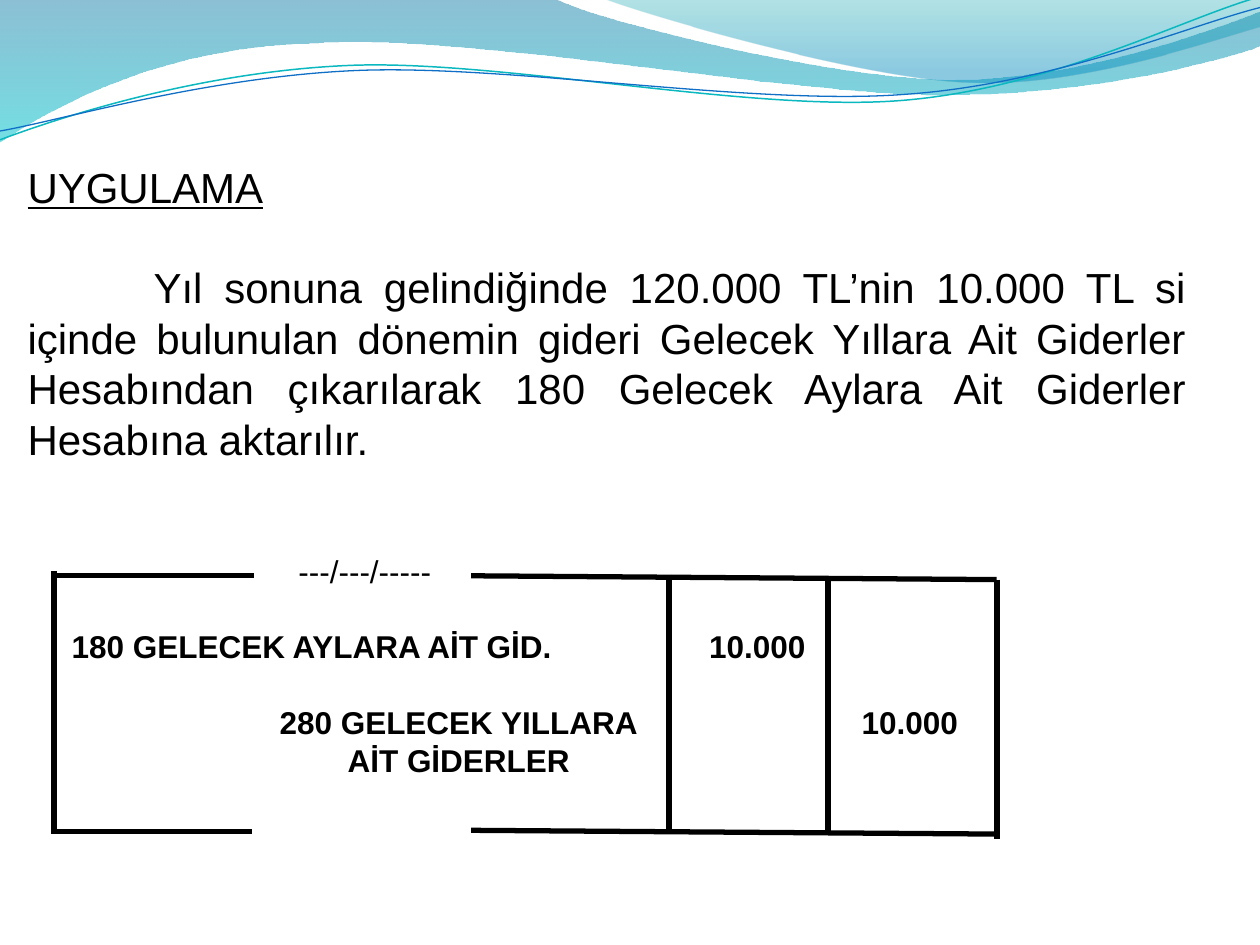
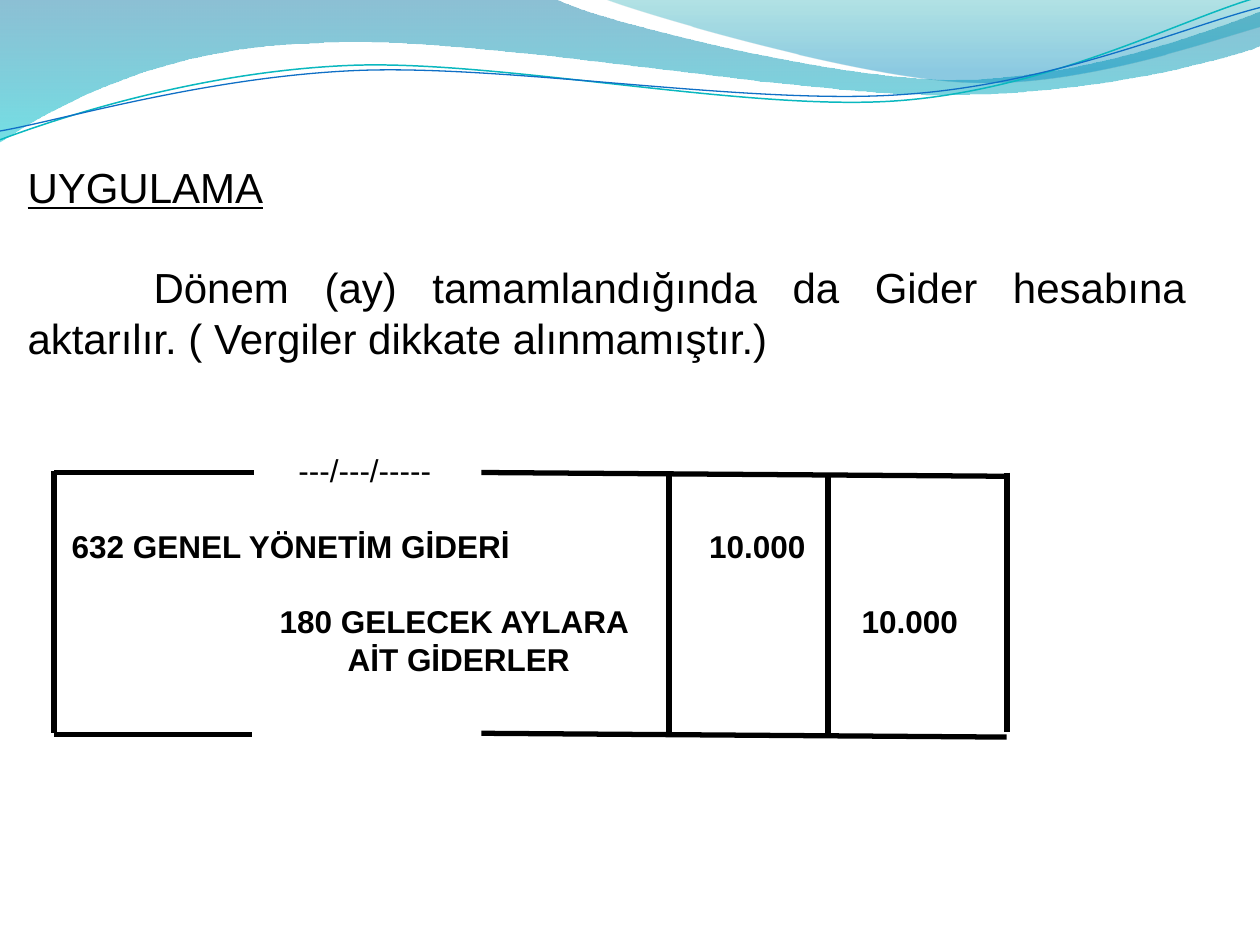
"""Build two accounting practice slides with a wave header and a journal entry each."""
from dataclasses import dataclass

from lxml import etree
from pptx import Presentation
from pptx import util as u
from pptx.dml.color import RGBColor
from pptx.enum import shapes, text
from pptx.oxml import ns


@dataclass(frozen=True)
class Theme:
    font: str = "Arial"
    ink: str = "000000"
    body_size: int = 24
    journal_size: int = 18
    leading: float = 1.2
    rule: float = 3
    column_rule: float = 3.5


THEME = Theme()
BODY_ROW = THEME.body_size * THEME.leading
JOURNAL_ROW = THEME.journal_size * THEME.leading
DEBIT_TAB, CREDIT_TAB, DATE_TAB, CREDIT_END_TAB = 0.35, 2, 2.15, 2.54
DEBIT_AMOUNT_TAB, CREDIT_AMOUNT_TAB = 5.41, 6.62

WAVES = [
    {"start": (0, 0), "stops": [(0, "0074A1", 45), (1, "00C6CF", 55)],
     "segments": [
         [(4.4, -0.01)],
         [(4.76, 0.17), (6.64, 0.63), (7.58, 0.63)],
         [(8.53, 0.63), (9.58, 0.26), (10, 0.09)],
         [(10.01, 0.36)],
         [(9.83, 0.44), (8.7, 0.76), (7.46, 0.75)],
         [(6.22, 0.75), (3.82, 0.28), (2.57, 0.34)],
         [(1.29, 0.36), (0.46, 0.83), (-0.01, 1.13)]]},
    {"start": (4.79, -0.01), "stops": [(0, "00A1A9", 30), (0.8, "008BBF", 45)],
     "segments": [
         [(5.09, 0.11), (6.82, 0.62), (7.69, 0.65)],
         [(8.56, 0.69), (9.61, 0.32), (10, 0.21)],
         [(10, 0)]]},
    {"start": (0, 1.11), "line": ("0AB8BF", 0.85),
     "segments": [
         [(0.48, 0.93), (1.58, 0.57), (2.77, 0.52)],
         [(3.95, 0.47), (5.93, 0.89), (7.13, 0.8)],
         [(8.33, 0.71), (9.38, 0.15), (9.98, -0.02)]]},
    {"start": (0, 1.04), "line": ("0F6FC6", 0.75),
     "segments": [
         [(0.47, 0.96), (1.64, 0.61), (2.83, 0.56)],
         [(4.03, 0.51), (5.97, 0.84), (7.17, 0.75)],
         [(8.36, 0.67), (9.41, 0.21), (10, 0.06)]]},
]

ENTRIES = [
    {"body": "Yıl sonuna gelindiğinde 120.000 TL’nin 10.000 TL si içinde bulunulan "
             "dönemin gideri Gelecek Yıllara Ait Giderler Hesabından çıkarılarak "
             "180 Gelecek Aylara Ait Giderler Hesabına aktarılır.",
     "debit": "180 GELECEK AYLARA AİT GİD.", "credit": "280 GELECEK YILLARA",
     "box_height": 7.98, "frame_top": 4.57, "frame_bottom": 6.6, "frame_right": 7.91,
     "columns": [(4.53, 6.62), (4.56, 6.62), (4.57, 6.63), (4.6, 6.66)]},
    {"body": "Dönem (ay) tamamlandığında da Gider hesabına aktarılır. "
             "( Vergiler dikkate alınmamıştır.)",
     "debit": "632 GENEL YÖNETİM GİDERİ", "credit": "180 GELECEK AYLARA",
     "box_height": 6.87, "frame_top": 3.75, "frame_bottom": 5.83, "frame_right": 7.99,
     "columns": [(3.74, 5.82), (3.76, 5.82), (3.76, 5.82), (3.75, 5.81)]},
]


def write_text(para, words, size=THEME.journal_size, bold=False, underline=False,
               gap=0, tabs=(), align=text.PP_ALIGN.LEFT):
    """Fill a paragraph with one formatted span, set on the given tab stops."""
    para.alignment = align
    para.line_spacing = u.Pt(size * THEME.leading)
    para.space_before, para.space_after = u.Pt(gap), u.Pt(0)
    if tabs:
        tab_list = etree.SubElement(para._p.get_or_add_pPr(), ns.qn("a:tabLst"))
        for position in tabs:
            etree.SubElement(tab_list, ns.qn("a:tab"), pos=str(u.Inches(position)), algn="l")
    span = para.add_run()
    span.text = words
    span.font.name, span.font.size = THEME.font, u.Pt(size)
    span.font.bold, span.font.underline = bold, underline
    span.font.color.rgb = RGBColor.from_string(THEME.ink)


def draw_wave(page, start, segments, closed):
    """Draw an outline whose three-point segments are cubic curves."""
    points = [(u.Inches(x), u.Inches(y)) for segment in segments for x, y in segment]
    builder = page.shapes.build_freeform(u.Inches(start[0]), u.Inches(start[1]))
    builder.add_line_segments(points, close=closed)
    shape = builder.convert_to_shape()
    steps = iter(list(shape.element.iter(ns.qn("a:lnTo"))))
    for segment in segments:
        parts = [next(steps) for point in segment]
        if len(parts) == 3:
            curve = etree.Element(ns.qn("a:cubicBezTo"))
            parts[0].addprevious(curve)
            for part in parts:
                curve.append(part[0])
                part.getparent().remove(part)
    shape.shadow.inherit = False
    return shape


deck = Presentation()
deck.slide_width, deck.slide_height = u.Inches(10), u.Inches(7.5)
blank = deck.slide_layouts[6]
pages = [deck.slides.add_slide(blank) for entry in ENTRIES]

master_tree = deck.slide_master.shapes.element
for order, wave in enumerate(WAVES):
    shape = draw_wave(pages[0], wave["start"], wave["segments"], "stops" in wave)
    if "stops" in wave:
        shape.line.fill.background()
        shape.fill.gradient()
        shape.fill.gradient_angle = 270
        for stop, (position, colour, opacity) in zip(shape.fill.gradient_stops, wave["stops"]):
            stop.position = position
            stop.color.rgb = RGBColor.from_string(colour)
        for swatch, (position, colour, opacity) in zip(
                shape.element.iter(ns.qn("a:srgbClr")), wave["stops"]):
            etree.SubElement(swatch, ns.qn("a:alpha")).set("val", str(opacity * 1000))
    else:
        colour, weight = wave["line"]
        shape.fill.background()
        shape.line.color.rgb = RGBColor.from_string(colour)
        shape.line.width = u.Pt(weight)
    master_tree.insert(2 + order, shape.element)

for page, entry in zip(pages, ENTRIES):
    box = page.shapes.add_textbox(u.Inches(0.12), u.Inches(1.23),
                                  u.Inches(9.39), u.Inches(entry["box_height"]))
    frame = box.text_frame
    frame.word_wrap = True
    frame.auto_size = text.MSO_AUTO_SIZE.NONE
    write_text(frame.paragraphs[0], "UYGULAMA", size=THEME.body_size, underline=True)
    write_text(frame.add_paragraph(), "\t" + entry["body"], size=THEME.body_size,
               gap=BODY_ROW, tabs=(1,), align=text.PP_ALIGN.JUSTIFY)
    journal = [
        ("\t---/---/-----", BODY_ROW + JOURNAL_ROW, (DATE_TAB,), False),
        (f"\t{entry['debit']}\t10.000", JOURNAL_ROW, (DEBIT_TAB, DEBIT_AMOUNT_TAB), True),
        (f"\t{entry['credit']}\t10.000", JOURNAL_ROW, (CREDIT_TAB, CREDIT_AMOUNT_TAB), True),
        ("\tAİT GİDERLER", 0, (CREDIT_END_TAB,), True),
    ]
    for words, gap, tabs, bold in journal:
        write_text(frame.add_paragraph(), words, gap=gap, tabs=tabs, bold=bold)

    top, bottom, right = entry["frame_top"], entry["frame_bottom"], entry["frame_right"]
    gap_end = right - 4.17
    rules = [
        (0.43, top, 2.02, top, THEME.rule),
        (gap_end, top, right, top + 0.03, THEME.rule),
        (0.43, bottom, 2, bottom, THEME.rule),
        (gap_end, bottom - 0.01, right, bottom + 0.02, THEME.rule),
    ]
    for x, (column_top, column_bottom) in zip((0.43, 5.31, 6.57, right), entry["columns"]):
        rules.append((x, column_top, x, column_bottom, THEME.column_rule))
    for *ends, weight in rules:
        rule = page.shapes.add_connector(shapes.MSO_CONNECTOR.STRAIGHT,
                                         *(u.Inches(value) for value in ends))
        rule.line.color.rgb = RGBColor.from_string(THEME.ink)
        rule.line.width = u.Pt(weight)
        etree.SubElement(rule.element.spPr, ns.qn("a:effectLst"))

deck.save("out.pptx")
